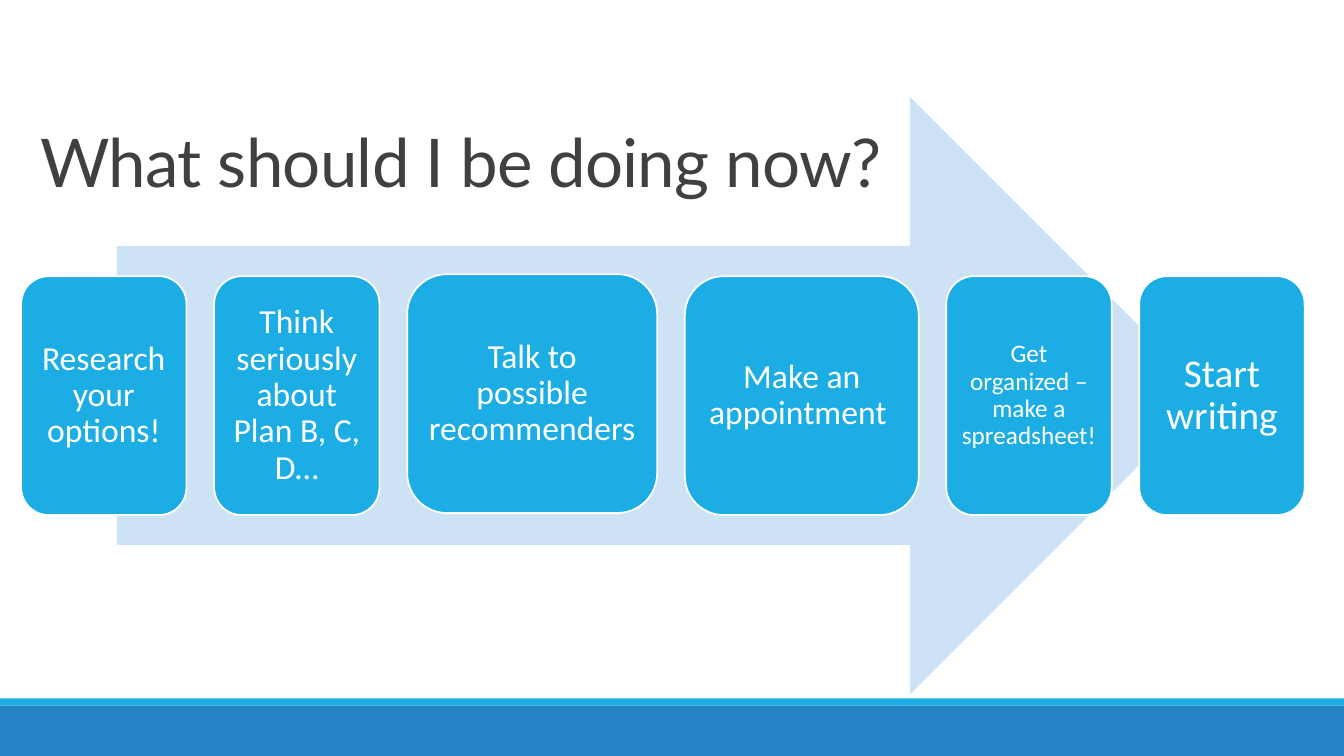
from pptx import Presentation
from pptx.dml.color import RGBColor
from pptx.enum.shapes import MSO_SHAPE
from pptx.enum.text import MSO_ANCHOR, MSO_AUTO_SIZE, PP_ALIGN
from pptx.util import Inches, Pt

RECT, ARROW, ROUNDED = MSO_SHAPE.RECTANGLE, MSO_SHAPE.RIGHT_ARROW, MSO_SHAPE.ROUNDED_RECTANGLE
LEFT, CENTER = PP_ALIGN.LEFT, PP_ALIGN.CENTER

SLIDE_W, SLIDE_H = 13.33, 7.5
CYAN, BLUE, PALE, GREY, WHITE = "1CADE4", "2683C6", "CDE3F5", "404040", "FFFFFF"

TITLE = "What should I be doing now?"
# text, box width, top, font size, inset
STEPS = [
    ("Research your options!", 1.64, 2.74, 24, 0.1),
    ("Think seriously about Plan B, C, D…", 1.64, 2.74, 24, 0.07),
    ("Talk to possible recommenders", 2.48, 2.72, 24, 0.1),
    ("Make an appointment ", 2.32, 2.74, 24, 0.1),
    ("Get organized – make a spreadsheet!", 1.64, 2.74, 18, 0.07),
    ("Start writing", 1.64, 2.74, 28, 0.12),
]
ROW_LEFT, ROW_RIGHT, STEP_H = 0.21, 12.94, 2.37


def rgb(color):
    return RGBColor.from_string(color)


def add_block(s, kind, x, y, w, h, fill, line=None):
    sp = s.shapes.add_shape(kind, Inches(x), Inches(y), Inches(w), Inches(h))
    sp.shadow.inherit = False
    sp.fill.solid()
    sp.fill.fore_color.rgb = rgb(fill)
    if line:
        sp.line.color.rgb = rgb(line)
        sp.line.width = Pt(1.25)
    else:
        sp.line.fill.background()
    return sp


def style_paragraph(p, font, size, color, align, spacing):
    p.alignment = align
    p.line_spacing = spacing
    p.font.name = font
    p.font.size = Pt(size)
    p.font.color.rgb = rgb(color)


def add_title(s):
    title = s.shapes.title
    title.left, title.top = Inches(0.3), Inches(0.46)
    title.width, title.height = Inches(11), Inches(1.59)
    tf = title.text_frame
    tf.text = TITLE
    tf.auto_size = MSO_AUTO_SIZE.NONE
    tf.vertical_anchor = MSO_ANCHOR.BOTTOM
    p = tf.paragraphs[0]
    style_paragraph(p, "Lato", 48, GREY, LEFT, 0.85)
    p.runs[0].font._element.set("spc", "-50")


def add_steps(s):
    gap = (ROW_RIGHT - ROW_LEFT - sum(step[1] for step in STEPS)) / (len(STEPS) - 1)
    x = ROW_LEFT
    for text, width, top, size, inset in STEPS:
        sp = add_block(s, ROUNDED, x, top, width, STEP_H, CYAN, WHITE)
        tf = sp.text_frame
        tf.text = text
        tf.word_wrap = True
        tf.vertical_anchor = MSO_ANCHOR.MIDDLE
        tf.margin_left = tf.margin_right = Inches(inset)
        tf.margin_top = tf.margin_bottom = Inches(inset)
        style_paragraph(tf.paragraphs[0], "Calibri", size, WHITE, CENTER, 0.9)
        x += width + gap


def main():
    prs = Presentation()
    prs.slide_width, prs.slide_height = Inches(SLIDE_W), Inches(SLIDE_H)
    s = prs.slides.add_slide(prs.slide_layouts[5])
    add_title(s)
    add_block(s, RECT, 0, 7, SLIDE_W, 0.5, BLUE)
    add_block(s, RECT, 0, 6.93, SLIDE_W, 0.07, CYAN)
    add_block(s, ARROW, 1.16, 0.96, 10.83, 5.93, PALE)
    add_steps(s)
    prs.save("out.pptx")


if __name__ == "__main__":
    main()
